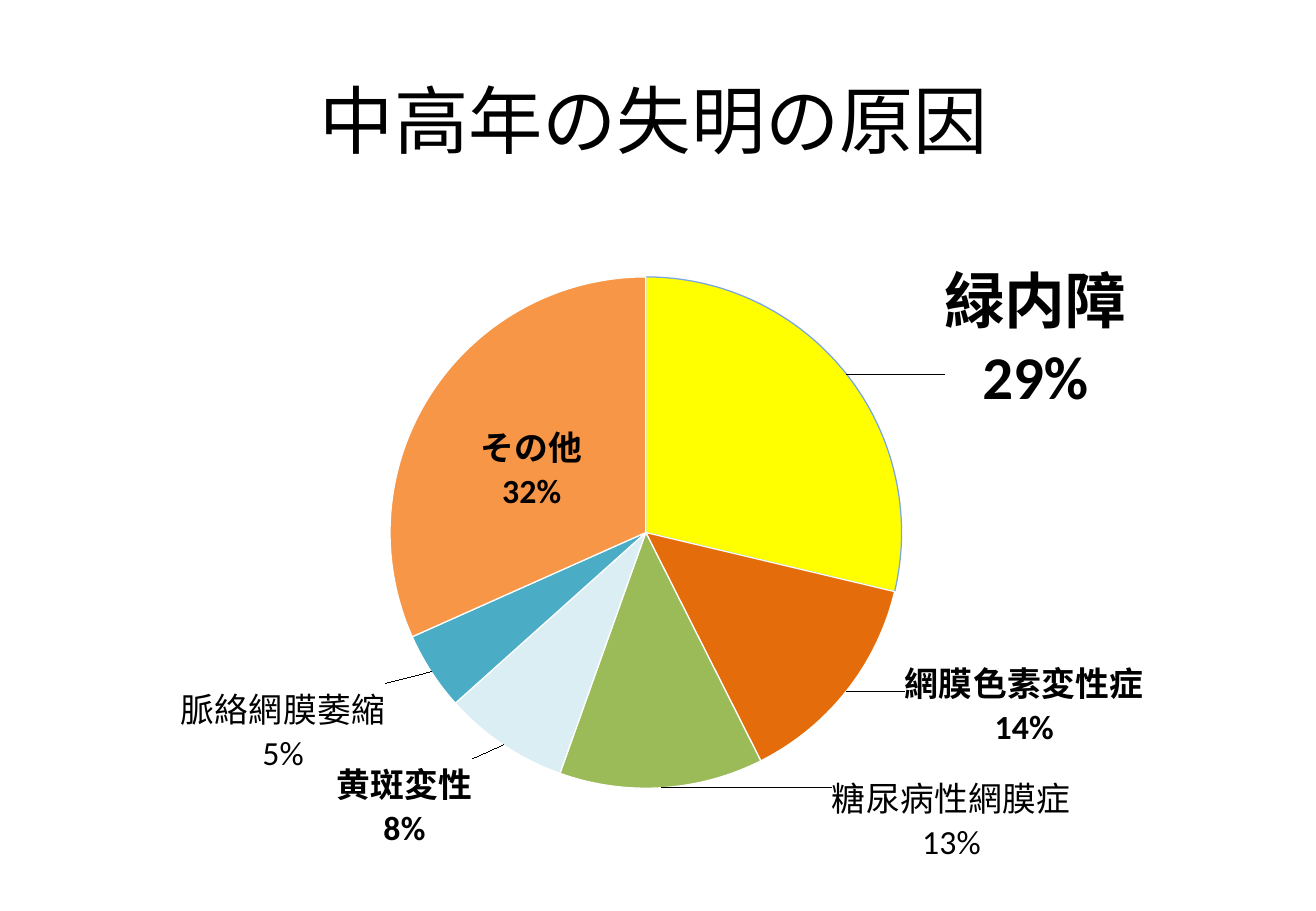
"""Build a slide with a pie chart of the causes of blindness in middle and old age."""
import lxml.etree
import pptx
import pptx.chart.data
import pptx.dml.color
import pptx.enum.chart
import pptx.enum.text
import pptx.oxml
import pptx.oxml.ns
import pptx.util

Inches = pptx.util.Inches
Pt = pptx.util.Pt
qn = pptx.oxml.ns.qn

TITLE = "中高年の失明の原因"
FONT = "Calibri"
COLORS = {
    "text": "000000",
    "edge": "FFFFFF",
    "highlight_edge": "7BA7E0",
    "yellow": "FFFF00",
    "dark_orange": "E46C0A",
    "green": "9BBB59",
    "pale_blue": "DBEEF4",
    "teal": "4BACC6",
    "orange": "F79646",
}
CAUSES = [
    {"name": "緑内障", "value": 29, "fill": "yellow", "edge": "highlight_edge",
     "size": 36, "bold": True, "offset": (0.07, 0.06)},
    {"name": "網膜色素変性症", "value": 14, "fill": "dark_orange", "edge": "edge",
     "size": 20, "bold": True, "offset": (0.04, -0.05)},
    {"name": "糖尿病性網膜症", "value": 13, "fill": "green", "edge": "edge",
     "size": 20, "bold": False, "offset": (0.22, -0.03), "text": "糖尿病性網膜症\n13%"},
    {"name": "黄斑変性", "value": 8, "fill": "pale_blue", "edge": "edge",
     "size": 20, "bold": True, "offset": (-0.02, 0.01)},
    {"name": "脈絡網膜萎縮", "value": 5, "fill": "teal", "edge": "edge",
     "size": 20, "bold": False, "offset": (-0.03, 0.01), "text": "脈絡網膜萎縮\n5%"},
    {"name": "その他", "value": 32, "fill": "orange", "edge": "edge",
     "size": 20, "bold": True, "offset": (0.12, 0.16)},
]
SLIDE_WIDTH, SLIDE_HEIGHT = 10.83, 7.5
CHART_TOP = 1.17
CHART_HEIGHT = SLIDE_HEIGHT - CHART_TOP
PIE_LEFT, PIE_TOP, PIE_DIAMETER = 3.21, 2.28, 4.21
TITLE_BOX = {"left": 0.78, "top": 0.17, "width": 9.21, "height": 1.61}


def color(name):
    return pptx.dml.color.RGBColor.from_string(COLORS[name])


def format_font(font, size, bold):
    for attribute, value in {"name": FONT, "size": Pt(size), "bold": bold}.items():
        setattr(font, attribute, value)
    font.color.rgb = color("text")


def make_layout(values):
    layout = pptx.oxml.parse_xml(
        '<c:layout xmlns:c="http://schemas.openxmlformats.org/drawingml/2006/chart">'
        "<c:manualLayout/></c:layout>")
    for tag, value in values.items():
        lxml.etree.SubElement(layout[0], qn("c:" + tag)).set("val", str(value))
    return layout


def set_label_content(labels):
    """Show category and percentage on two lines."""
    shown = {"showVal": 0, "showCatName": 1, "showPercent": 1}
    for tag, value in shown.items():
        labels.find(qn("c:" + tag)).set("val", str(value))
    for separator in labels.findall(qn("c:separator")):
        labels.remove(separator)
    separator = labels.makeelement(qn("c:separator"))
    separator.text = "\n"
    last_shown = labels.find(qn("c:showBubbleSize"))
    if last_shown is None:
        last_shown = labels.find(qn("c:showPercent"))
    last_shown.addnext(separator)


def format_slice(point, cause):
    point.format.fill.solid()
    point.format.fill.fore_color.rgb = color(cause["fill"])
    point.format.line.color.rgb = color(cause["edge"])
    point.format.line.width = Pt(0.75)

    label = point.data_label
    if "text" in cause:
        label.text_frame.text = cause["text"]
        for paragraph in label.text_frame.paragraphs:
            for run in paragraph.runs:
                format_font(run.font, cause["size"], cause["bold"])
    else:
        format_font(label.font, cause["size"], cause["bold"])
    label.position = pptx.enum.chart.XL_LABEL_POSITION.OUTSIDE_END


def add_pie(slide):
    data = pptx.chart.data.CategoryChartData()
    data.categories = [cause["name"] for cause in CAUSES]
    data.add_series("Series 1", [cause["value"] for cause in CAUSES])
    chart = slide.shapes.add_chart(
        pptx.enum.chart.XL_CHART_TYPE.PIE, 0, Inches(CHART_TOP),
        Inches(SLIDE_WIDTH), Inches(CHART_HEIGHT), data).chart
    chart.has_title = False
    chart.has_legend = False
    format_font(chart.font, 18, False)

    plot = chart.plots[0]
    plot.vary_by_categories = True
    series = plot.series[0]
    for index, cause in enumerate(CAUSES):
        format_slice(series.points[index], cause)

    labels = series.data_labels
    format_font(labels.font, 28, True)
    labels.number_format = "0%"
    labels.number_format_is_linked = False
    labels.position = pptx.enum.chart.XL_LABEL_POSITION.OUTSIDE_END
    group = series._element.find(qn("c:dLbls"))
    set_label_content(group)
    for label, cause in zip(group.findall(qn("c:dLbl")), CAUSES):
        set_label_content(label)
        for layout in label.findall(qn("c:layout")):
            label.remove(layout)
        label.find(qn("c:idx")).addnext(make_layout(dict(zip("xy", cause["offset"]))))

    plot_area = plot._element.getparent()
    for layout in plot_area.findall(qn("c:layout")):
        plot_area.remove(layout)
    plot_area.insert(0, make_layout({
        "layoutTarget": "inner", "xMode": "edge", "yMode": "edge",
        "x": PIE_LEFT / SLIDE_WIDTH,
        "y": (PIE_TOP - CHART_TOP) / CHART_HEIGHT,
        "w": PIE_DIAMETER / SLIDE_WIDTH,
        "h": PIE_DIAMETER / CHART_HEIGHT,
    }))


def add_title(slide):
    title = slide.shapes.title
    for attribute, value in TITLE_BOX.items():
        setattr(title, attribute, Inches(value))
    title.text_frame.text = TITLE
    title.text_frame.vertical_anchor = pptx.enum.text.MSO_ANCHOR.MIDDLE
    paragraph = title.text_frame.paragraphs[0]
    paragraph.alignment = pptx.enum.text.PP_ALIGN.CENTER
    format_font(paragraph.runs[0].font, 44, False)
    slide.shapes._spTree.append(title._element)


def main():
    presentation = pptx.Presentation()
    presentation.slide_width = Inches(SLIDE_WIDTH)
    presentation.slide_height = Inches(SLIDE_HEIGHT)
    slide = presentation.slides.add_slide(presentation.slide_layouts[5])
    add_pie(slide)
    add_title(slide)
    presentation.save("out.pptx")


if __name__ == "__main__":
    main()
